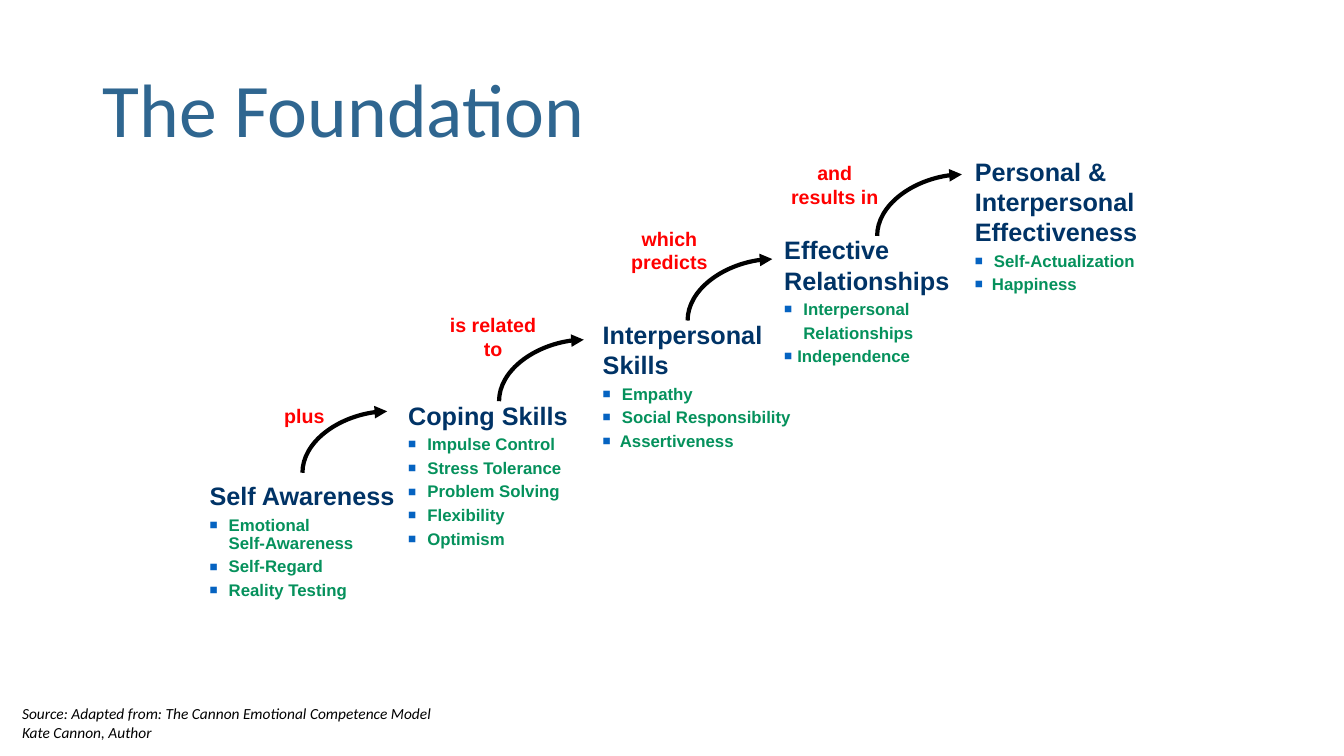
import pptx
import pptx.util
import pptx.dml.color
import pptx.enum.shapes
import pptx.enum.text
import pptx.oxml
import pptx.oxml.ns

Inches = pptx.util.Inches
Pt = pptx.util.Pt
ALIGN = pptx.enum.text.PP_ALIGN
qn = pptx.oxml.ns.qn

COLORS = {
    "title": "2F6690",
    "head": "003366",
    "item": "05915C",
    "bullet": "0563C1",
    "link": "FF0000",
    "ink": "000000",
}
INDENT = 0.19
ARROW_W, ARROW_H = 0.84, 0.61

# Box, heading, items; an item is its lines, its indent and whether it has a bullet
STEPS = [
    ((1.98, 4.72, 2.08, 1.55), "Self Awareness", [
        (["Emotional", "Self-Awareness"], INDENT, True),
        (["Self-Regard"], INDENT, True),
        (["Reality Testing"], INDENT, True)]),
    ((3.95, 3.92, 2.18, 1.85), "Coping Skills", [
        (["Impulse Control"], INDENT, True),
        (["Stress Tolerance"], INDENT, True),
        (["Problem Solving"], INDENT, True),
        (["Flexibility"], INDENT, True),
        (["Optimism"], INDENT, True)]),
    ((5.88, 3.12, 2.2, 1.43), "Interpersonal Skills", [
        (["Empathy"], INDENT, True),
        (["Social Responsibility"], INDENT, True),
        (["Assertiveness"], 0.17, True)]),
    ((7.68, 2.28, 1.84, 1.67), "Effective Relationships", [
        (["Interpersonal"], INDENT, True),
        (["Relationships"], INDENT, False),
        (["Independence"], 0.13, True)]),
    ((9.57, 1.5, 1.84, 1.48), "Personal & Interpersonal Effectiveness", [
        (["Self-Actualization"], INDENT, True),
        (["Happiness"], 0.17, True)]),
]

# Label box, wording, alignment, start of the arrow
LINKS = [
    ((2.72, 3.96, 0.8, 0.33), "plus", ALIGN.LEFT, (3, 4.69)),
    ((4.29, 3.06, 1.2, 0.57), "is related to", ALIGN.CENTER, (4.95, 3.98)),
    ((6.04, 2.2, 1.2, 0.57), "which predicts", ALIGN.CENTER, (6.82, 3.18)),
    ((7.68, 1.55, 1.2, 0.57), "and results in", ALIGN.CENTER, (8.7, 2.34)),
]


def add_run(para, text, size, color, font="Arial", bold=False, italic=False):
    run = para.add_run()
    run.text = text
    run.font.name = font
    run.font.size = Pt(size)
    run.font.bold = bold
    run.font.italic = italic
    run.font.color.rgb = pptx.dml.color.RGBColor.from_string(COLORS[color])


def add_frame(slide, box):
    frame = slide.shapes.add_textbox(*map(Inches, box)).text_frame
    frame.word_wrap = True
    return frame


def add_child(parent, tag, **attrs):
    child = parent.makeelement(qn(tag), attrs)
    parent.append(child)
    return child


def set_bullet(para, indent, marked):
    """Indent a paragraph and, if marked, hang a square bullet before it."""
    props = para._p.get_or_add_pPr()
    props.set("marL", str(Inches(indent)))
    props.set("indent", str(-Inches(indent) if marked else 0))
    if marked:
        tint = add_child(props, "a:buClr")
        add_child(tint, "a:srgbClr", val=COLORS["bullet"])
        add_child(props, "a:buSzPct", val="80000")
        add_child(props, "a:buFont", typeface="Arial")
        add_child(props, "a:buChar", char="■")


def add_title(slide, box, text):
    title = slide.shapes.title
    title.left, title.top, title.width, title.height = map(Inches, box)
    frame = title.text_frame
    frame.vertical_anchor = pptx.enum.text.MSO_ANCHOR.MIDDLE
    para = frame.paragraphs[0]
    para.alignment = ALIGN.LEFT
    para.line_spacing = 0.9
    add_run(para, text, 54, "title", font="Calibri")


def add_step(slide, box, head, items):
    frame = add_frame(slide, box)
    add_run(frame.paragraphs[0], head, 18, "head", bold=True)
    for lines, indent, marked in items:
        para = frame.add_paragraph()
        set_bullet(para, indent, marked)
        para.line_spacing = 0.9
        para.space_before = Pt(4)
        for num, line in enumerate(lines):
            if num:
                para.add_line_break()
            add_run(para, line, 12, "item", bold=True)


def add_arrow(slide, start):
    """Draw a quarter curve that leaves start upwards and ends to the right."""
    left, low = start
    mid_x, mid_y = left + ARROW_W / 2, low - ARROW_H / 2
    # The preset curve runs right then down, so it is laid out on its side and turned
    x, y = mid_x - ARROW_H / 2, mid_y - ARROW_W / 2
    arrow = slide.shapes.add_connector(
        pptx.enum.shapes.MSO_CONNECTOR.CURVE,
        Inches(x), Inches(y), Inches(x + ARROW_H), Inches(y + ARROW_W))
    arrow.line.width = Pt(3)
    arrow.line.color.rgb = pptx.dml.color.RGBColor.from_string(COLORS["ink"])
    props = arrow._element.spPr
    props.find(qn("a:xfrm")).set("rot", str(270 * 60000))
    props.find(qn("a:prstGeom")).set("prst", "curvedConnector2")
    add_child(props.find(qn("a:ln")), "a:tailEnd", type="triangle")
    add_child(props, "a:effectLst")


def add_link(slide, box, text, align, start):
    add_arrow(slide, start)
    para = add_frame(slide, box).paragraphs[0]
    para.alignment = align
    add_run(para, text, 14, "link", bold=True)


def add_source(slide, box, lines):
    para = add_frame(slide, box).paragraphs[0]
    for num, line in enumerate(lines):
        if num:
            para.add_line_break()
        add_run(para, line, 11, "ink", font="Calibri", italic=True)


def main():
    deck = pptx.Presentation()
    deck.slide_width, deck.slide_height = Inches(13.33), Inches(7.5)
    slide = deck.slides.add_slide(deck.slide_layouts.get_by_name("Title Only"))
    add_title(slide, (0.92, 0.4, 11.5, 1.45), "The Foundation")
    for step in STEPS:
        add_step(slide, *step)
    for link in LINKS:
        add_link(slide, *link)
    add_source(slide, (0.12, 6.94, 10.32, 0.5), [
        "Source: Adapted from: The Cannon Emotional Competence Model",
        "Kate Cannon, Author"])
    deck.save("out.pptx")


if __name__ == "__main__":
    main()
